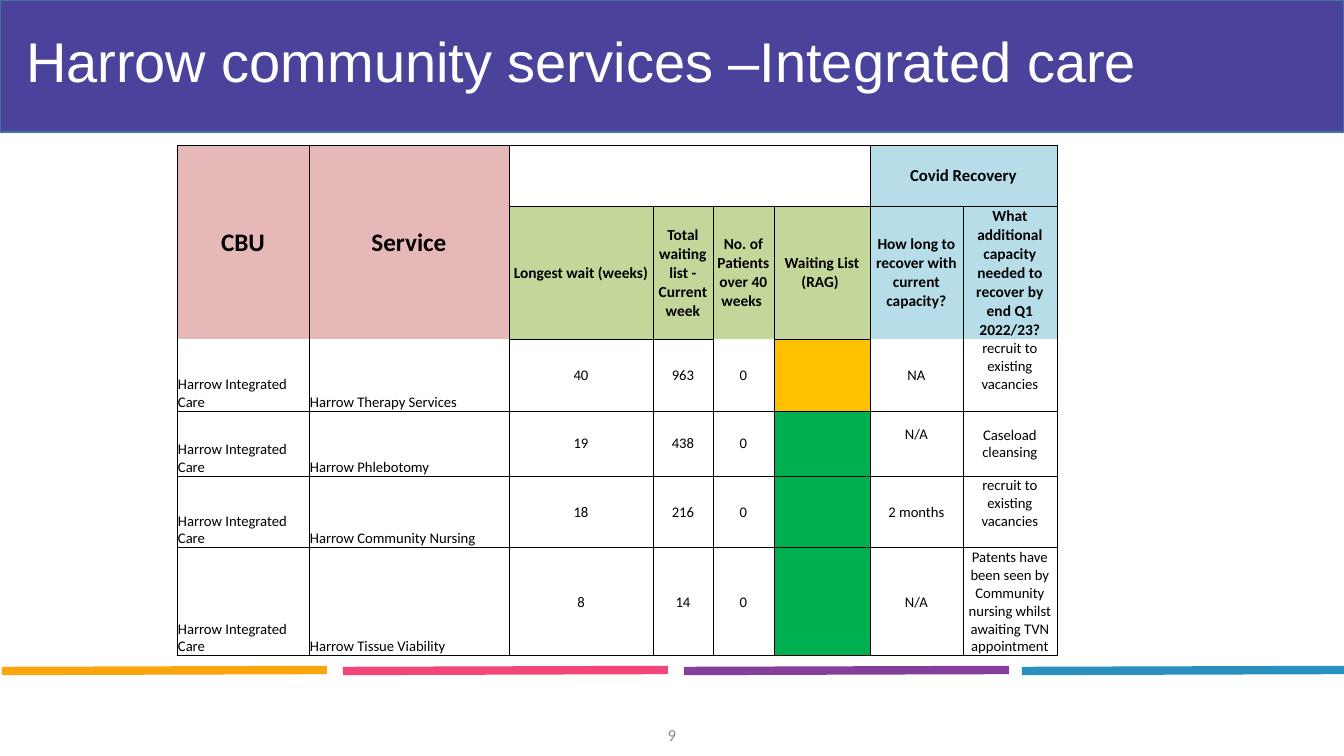
"""Build the Harrow integrated care waiting list slide."""
from pptx import Presentation
from pptx.dml.color import RGBColor
from pptx.enum.shapes import MSO_CONNECTOR as Connector, MSO_SHAPE as Shape
from pptx.enum.text import MSO_ANCHOR as Anchor, MSO_AUTO_SIZE as AutoSize, PP_ALIGN as Align
from pptx.oxml.ns import qn
from pptx.util import Pt
from lxml.etree import SubElement

COLORS = {
    "banner": "4B429B", "edge": "43739E", "white": "FFFFFF", "black": "000000",
    "number": "8C8C8C", "pink": "E6B8B7", "green": "C4D79B", "blue": "B7DEE8",
    "amber_rag": "FFC000", "green_rag": "00B050",
}
STRIPES = {2: "F9A50E", 343: "F24678", 684: "853E9A", 1022: "2A90C0"}
COLUMNS = [132, 200, 144, 60, 61, 96, 93, 94]
ROWS = [61, 133, 72, 65, 71, 108]
LINE = 18
HEADERS = [
    (0, 0, "CBU", 18, "pink"),
    (0, 1, "Service", 18, "pink"),
    (0, 6, "Covid Recovery", 12, "blue"),
    (1, 2, "Longest wait (weeks)", 11, "green"),
    (1, 3, "Total waiting list - Current week", 11, "green"),
    (1, 4, "No. of Patients over 40 weeks ", 11, "green"),
    (1, 5, "Waiting List (RAG) ", 11, "green"),
    (1, 6, "How long to recover with current capacity?", 11, "blue"),
    (1, 7, "What additional capacity needed to recover by end Q1 2022/23?", 11, "blue"),
]
SERVICES = [
    ("Harrow Therapy Services", "40", "963", "amber_rag", "NA", "recruit to existing vacancies"),
    ("Harrow Phlebotomy", "19", "438", "green_rag", "N/A", "Caseload cleansing"),
    ("Harrow Community Nursing", "18", "216", "green_rag", "2 months",
     "recruit to existing vacancies"),
    ("Harrow Tissue Viability", "8", "14", "green_rag", "N/A",
     "Patents have been seen by Community nursing whilst awaiting TVN appointment"),
]
LIFTED = {(2, 7), (3, 6), (4, 7)}
OPEN_BELOW = {(0, 0), (0, 1)} | {(1, column) for column in (0, 1, 4, 6, 7)}
OPEN_ABOVE = {(2, column) for column in (0, 1, 4, 6, 7)}


def px(length):
    return round(length * 914400 / 100.8)


def write(frame, text, name, size, color, align, bold=False):
    para = frame.paragraphs[0]
    para.alignment = align
    span = para.add_run()
    span.text = text
    for key, value in {"name": name, "size": Pt(size), "bold": bold}.items():
        setattr(span.font, key, value)
    span.font.color.rgb = RGBColor.from_string(COLORS[color])


deck = Presentation()
deck.slide_width, deck.slide_height = px(1344), px(756)
page = deck.slides.add_slide(deck.slide_layouts[5])
title = page.shapes.title

banner = page.shapes.add_shape(Shape.RECTANGLE, 0, 0, px(1344), px(132))
banner.shadow.inherit = False
banner.fill.solid()
banner.fill.fore_color.rgb = RGBColor.from_string(COLORS["banner"])
banner.line.color.rgb = RGBColor.from_string(COLORS["edge"])
banner.line.width = Pt(1)
title.element.addprevious(banner.element)

for left, color in STRIPES.items():
    stripe = page.shapes.add_connector(
        Connector.STRAIGHT, px(left), px(671), px(left + 325), px(670))
    stripe.line.color.rgb = RGBColor.from_string(color)
    stripe.line.width = Pt(6)
    SubElement(stripe.element.spPr, qn("a:effectLst"))

title.left, title.top, title.width, title.height = px(16), px(1), px(1257), px(126)
title.text_frame.auto_size = AutoSize.NONE
title.text_frame.vertical_anchor = Anchor.MIDDLE
write(title.text_frame, "Harrow community services –Integrated care", "Arial", 40,
      "white", Align.LEFT)
title.text_frame.paragraphs[0].line_spacing = 0.9

number = page.shapes.add_textbox(px(521), px(715), px(302), px(40)).text_frame
number.word_wrap = True
number.vertical_anchor = Anchor.MIDDLE
write(number, "9", "Calibri", 12, "number", Align.CENTER)

table = page.shapes.add_table(
    len(ROWS), len(COLUMNS), px(177), px(145), px(sum(COLUMNS)), px(sum(ROWS))).table
table.first_row = table.horz_banding = False
for column, width in enumerate(COLUMNS):
    table.columns[column].width = px(width)
for row, height in enumerate(ROWS):
    table.rows[row].height = px(height)

fills = {}
for row, column, text, size, fill in HEADERS:
    fills[row, column] = fill
    write(table.cell(row, column).text_frame, text, "Calibri", size, "black",
          Align.CENTER, True)
for row, (service, wait, total, rag, recovery, capacity) in enumerate(SERVICES, 2):
    fills[row, 5] = rag
    texts = ["Harrow Integrated Care", service, wait, total, "0", "", recovery, capacity]
    for column, text in enumerate(texts):
        if text:
            align = Align.LEFT if column < 2 else Align.CENTER
            write(table.cell(row, column).text_frame, text, "Calibri", 10.5, "black", align)

for row in range(len(ROWS)):
    for column in range(len(COLUMNS)):
        spot = row, column
        cell = table.cell(row, column)
        cell.margin_left = cell.margin_right = cell.margin_top = px(1)
        cell.margin_bottom = px(LINE if spot in LIFTED else 0)
        low = row > 1 and column < 2
        cell.vertical_anchor = Anchor.BOTTOM if low else Anchor.MIDDLE
        for side in ("lnL", "lnR", "lnT", "lnB"):
            border = SubElement(cell._tc.get_or_add_tcPr(), qn(f"a:{side}"), w=str(Pt(0.5)))
            if side == "lnB" and spot in OPEN_BELOW or side == "lnT" and spot in OPEN_ABOVE:
                SubElement(border, qn("a:noFill"))
            else:
                paint = SubElement(border, qn("a:solidFill"))
                SubElement(paint, qn("a:srgbClr"), val=COLORS["black"])
        cell.fill.solid()
        cell.fill.fore_color.rgb = RGBColor.from_string(COLORS[fills.get(spot, "white")])

for top, left, bottom, right in [(0, 0, 1, 0), (0, 1, 1, 1), (0, 2, 0, 5), (0, 6, 0, 7)]:
    table.cell(top, left).merge(table.cell(bottom, right))

deck.save("out.pptx")
